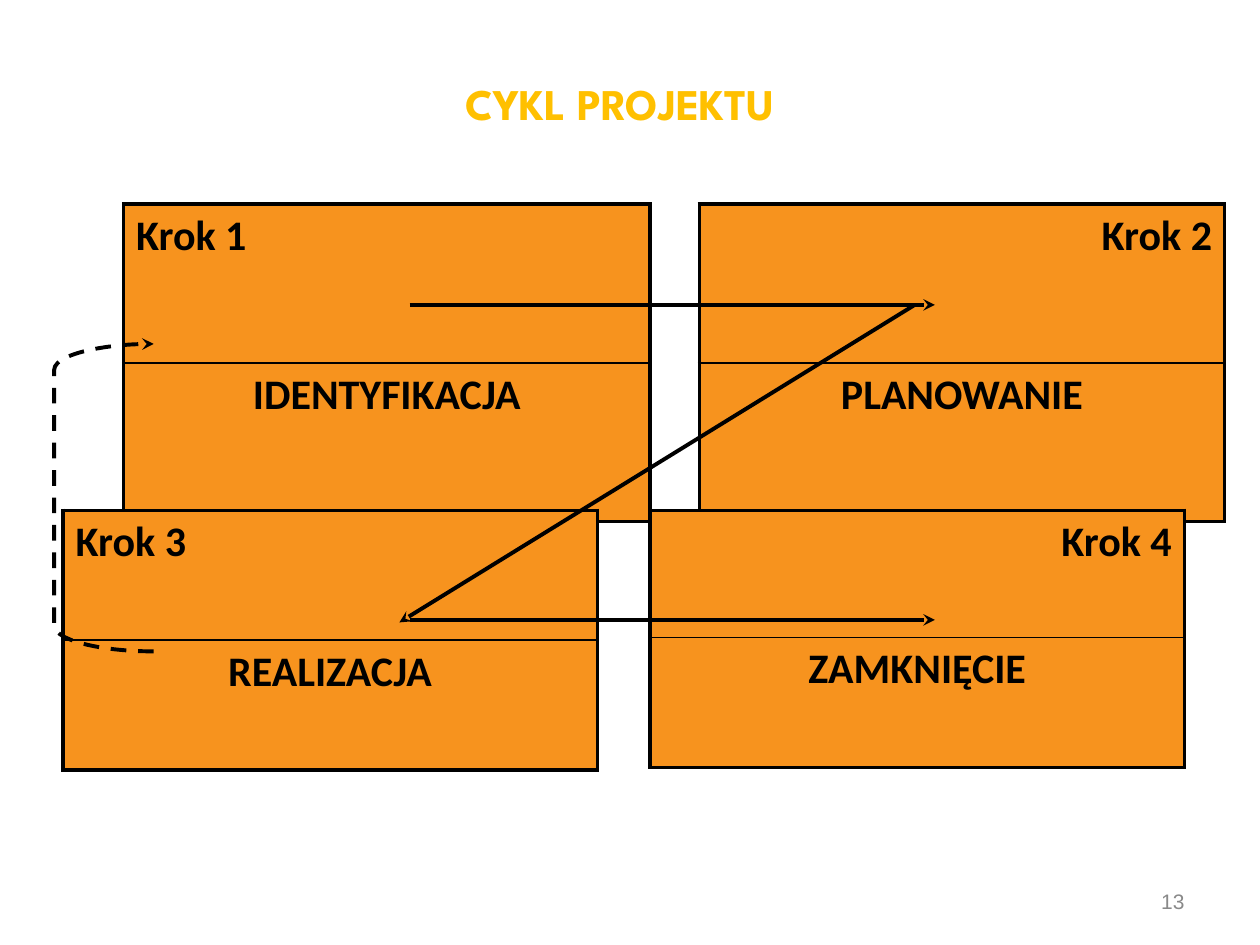
from lxml import etree
from pptx import Presentation
from pptx.dml.color import RGBColor
from pptx.enum.dml import MSO_LINE
from pptx.enum.shapes import MSO_CONNECTOR, MSO_SHAPE
from pptx.enum.text import MSO_ANCHOR, PP_ALIGN
from pptx.oxml.ns import qn
from pptx.util import Inches, Pt

LEFT, CENTER, RIGHT = PP_ALIGN.LEFT, PP_ALIGN.CENTER, PP_ALIGN.RIGHT
MIDDLE = MSO_ANCHOR.MIDDLE
STRAIGHT = MSO_CONNECTOR.STRAIGHT
LEFT_BRACKET = MSO_SHAPE.LEFT_BRACKET
DASH = MSO_LINE.DASH
COLORS = {"title": "FFC000", "box": "F7931E", "ink": "000000", "number": "898989"}


def write_text(text_frame, text, alignment, font_name, size, color, bold):
    text_frame.text = text
    paragraph = text_frame.paragraphs[0]
    paragraph.alignment = alignment
    font = paragraph.runs[0].font
    font.name, font.size, font.bold = font_name, Pt(size), bold
    font.color.rgb = RGBColor.from_string(COLORS[color])
    return paragraph


def style_arrow(shape):
    """Give a line its black stroke and a stealth head at its end."""
    shape.line.color.rgb = RGBColor.from_string(COLORS["ink"])
    shape.line.width = Pt(2.25)
    etree.SubElement(shape.line._get_or_add_ln(), qn("a:tailEnd"), type="stealth")


presentation = Presentation()
presentation.slide_width, presentation.slide_height = Inches(10), Inches(7.5)
slide = presentation.slides.add_slide(presentation.slide_layouts[6])

# Title
title = slide.shapes.add_textbox(Inches(0.72), Inches(0.49), Inches(7.87), Inches(0.66))
title.text_frame.word_wrap = True
title.text_frame.vertical_anchor = MIDDLE
title_paragraph = write_text(
    title.text_frame, "CYKL PROJEKTU", CENTER, "League Spartan", 25, "title", True)
title_paragraph._p.get_or_add_pPr().set("marL", str(Inches(0.53)))

# Project steps: left, top, width, row heights, label, label alignment, name
steps = [
    (0.98, 1.62, 4.18, (1.26, 1.26), "Krok 1", LEFT, "IDENTYFIKACJA"),
    (5.55, 1.62, 4.17, (1.26, 1.26), "Krok 2", RIGHT, "PLANOWANIE"),
    (0.5, 4.05, 4.24, (1.03, 1.03), "Krok 3", LEFT, "REALIZACJA"),
    (5.16, 4.05, 4.24, (1.01, 1.03), "Krok 4", RIGHT, "ZAMKNIĘCIE"),
]
for left, top, width, heights, label, alignment, name in steps:
    table = slide.shapes.add_table(
        2, 1, Inches(left), Inches(top), Inches(width), Inches(sum(heights))).table
    table.first_row = table.horz_banding = False
    rows = [(label, alignment, 2.25, 1), (name, CENTER, 1, 2.25)]
    for index, (text, text_alignment, top_border, bottom_border) in enumerate(rows):
        table.rows[index].height = Inches(heights[index])
        cell = table.cell(index, 0)
        write_text(cell.text_frame, text, text_alignment, "Calibri", 24, "ink", True)
        properties = cell._tc.get_or_add_tcPr()
        borders = {"L": 2.25, "R": 2.25, "T": top_border, "B": bottom_border}
        for side, points in borders.items():
            border = etree.SubElement(properties, qn("a:ln" + side), w=str(Pt(points)))
            fill = etree.SubElement(border, qn("a:solidFill"))
            etree.SubElement(fill, qn("a:srgbClr"), val=COLORS["ink"])
        cell.fill.solid()
        cell.fill.fore_color.rgb = RGBColor.from_string(COLORS["box"])

# Slide number
number = slide.shapes.add_textbox(Inches(7.17), Inches(6.95), Inches(2.33), Inches(0.4))
number.text_frame.word_wrap = True
number.text_frame.vertical_anchor = MIDDLE
write_text(number.text_frame, "13", RIGHT, "Arial", 12, "number", False)

# Arrows from step to step
for points in [(3.25, 2.42, 7.42, 2.42), (7.26, 2.42, 3.17, 4.94), (3.25, 4.92, 7.42, 4.92)]:
    arrow = slide.shapes.add_connector(STRAIGHT, *[Inches(value) for value in points])
    style_arrow(arrow)
    etree.SubElement(arrow._element.spPr, qn("a:effectLst"))

# Dashed return from step 3 to step 1
return_arrow = slide.shapes.add_shape(
    LEFT_BRACKET, Inches(0.43), Inches(2.73), Inches(0.79), Inches(2.44))
return_arrow.adjustments[0] = 0.26
return_arrow.shadow.inherit = False
return_arrow.fill.background()
return_arrow.line.dash_style = DASH
style_arrow(return_arrow)

presentation.save("out.pptx")
